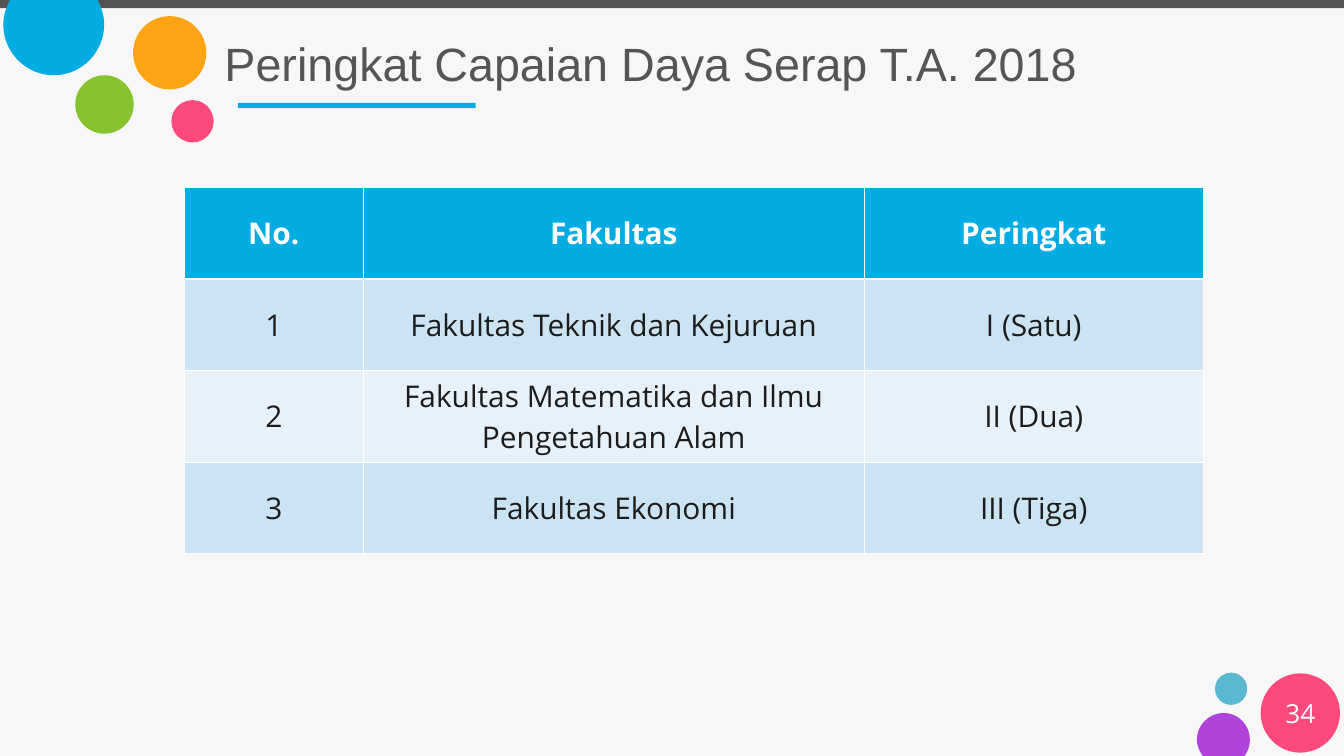
"""Build a slide that ranks faculties by budget absorption in 2018."""
import pptx
import pptx.dml.color
import pptx.enum.shapes
import pptx.enum.text
import pptx.oxml
import pptx.oxml.ns
import pptx.util

RGBColor = pptx.dml.color.RGBColor
Shape = pptx.enum.shapes.MSO_SHAPE
Align = pptx.enum.text.PP_ALIGN
Anchor = pptx.enum.text.MSO_ANCHOR

SCALE = 9144
SLIDE_WIDTH, SLIDE_HEIGHT = 2000, 1125

BACKGROUND = RGBColor(0xF7, 0xF7, 0xF7)
TOP_BAR = RGBColor(0x54, 0x54, 0x54)
TITLE_GREY = RGBColor(0x55, 0x55, 0x55)
BLUE = RGBColor(0x00, 0xAC, 0xE2)
PINK = RGBColor(0xFD, 0x49, 0x7C)
GREEN = RGBColor(0x87, 0xC3, 0x2F)
ORANGE = RGBColor(0xFF, 0xA5, 0x13)
TEAL = RGBColor(0x5B, 0xB8, 0xD1)
PURPLE = RGBColor(0xB1, 0x43, 0xDD)
WHITE = RGBColor(0xFF, 0xFF, 0xFF)
INK = RGBColor(0x1C, 0x1C, 0x1C)
BANDS = (RGBColor(0xCC, 0xE3, 0xF4), RGBColor(0xE7, 0xF1, 0xFA))

BUBBLES = [
    (112, 112, 87, GREEN),
    (198, 24, 109, ORANGE),
    (1808, 1001, 48, TEAL),
    (1876, 1002, 118, PINK),
]
TOP_BUBBLE = [
    [(15, 0)],
    [(145, 0)],
    [(151, 11), (155, 23), (155, 37)],
    [(155, 78), (121, 112), (80, 112)],
    [(39, 112), (5, 78), (5, 37)],
    [(5, 23), (9, 11), (15, 0)],
]
BOTTOM_BUBBLE = [
    [(1821, 1061)],
    [(1843, 1061), (1860, 1079), (1860, 1101)],
    [(1860, 1110), (1857, 1118), (1852, 1125)],
    [(1790, 1125)],
    [(1785, 1118), (1781, 1110), (1781, 1101)],
    [(1781, 1079), (1799, 1061), (1821, 1061)],
]

COLUMN_WIDTHS = (267, 745, 505)
ROW_HEIGHTS = (136, 136, 137, 136)
RANKING = [
    ("No.", "Fakultas", "Peringkat"),
    ("1", "Fakultas Teknik dan Kejuruan", "I (Satu)"),
    ("2", "Fakultas Matematika dan Ilmu Pengetahuan Alam", "II (Dua)"),
    ("3", "Fakultas Ekonomi", "III (Tiga)"),
]


def px(length):
    return pptx.util.Emu(length * SCALE)


def paint(shape, colour):
    shape.fill.solid()
    shape.fill.fore_color.rgb = colour
    shape.line.fill.background()
    shape.shadow.inherit = False


def add_plain(slide, kind, left, top, width, height, colour):
    shape = slide.shapes.add_shape(kind, px(left), px(top), px(width), px(height))
    paint(shape, colour)


def add_cut_bubble(slide, segments, colour):
    start, *rest = segments
    builder = slide.shapes.build_freeform(*start[0], scale=SCALE)
    builder.add_line_segments([point for segment in rest for point in segment], close=True)
    bubble = builder.convert_to_shape()
    lines = iter(bubble._element.findall(".//" + pptx.oxml.ns.qn("a:lnTo")))
    for segment in rest:
        steps = [next(lines) for _ in segment]
        if len(steps) == 3:
            curve = pptx.oxml.parse_xml(f'<a:cubicBezTo {pptx.oxml.ns.nsdecls("a")}/>')
            steps[0].addprevious(curve)
            for step in steps:
                curve.append(step[0])
                step.getparent().remove(step)
    paint(bubble, colour)


def set_font(paragraph, name, size, colour, bold=False):
    paragraph.font.name = name
    paragraph.font.size = pptx.util.Pt(size)
    paragraph.font.bold = bold
    paragraph.font.color.rgb = colour


def add_text(slide, text, left, top, width, height, font, size, colour, align):
    box = slide.shapes.add_textbox(px(left), px(top), px(width), px(height))
    frame = box.text_frame
    frame.word_wrap = True
    frame.vertical_anchor = Anchor.MIDDLE
    frame.margin_left = frame.margin_right = px(18)
    frame.margin_top = frame.margin_bottom = px(9)
    paragraph = frame.paragraphs[0]
    paragraph.text = text
    paragraph.alignment = align
    set_font(paragraph, font, size, colour)


def set_borders(cell, widths):
    properties = cell._tc.get_or_add_tcPr()
    for position, (side, points) in enumerate(widths.items()):
        border = pptx.oxml.parse_xml(
            f'<a:ln{side} {pptx.oxml.ns.nsdecls("a")} w="{pptx.util.Pt(points)}">'
            f'<a:solidFill><a:srgbClr val="{WHITE}"/></a:solidFill></a:ln{side}>'
        )
        properties.insert(position, border)


def add_ranking(slide, left, top):
    table = slide.shapes.add_table(
        len(RANKING), len(COLUMN_WIDTHS), px(left), px(top),
        px(sum(COLUMN_WIDTHS)), px(sum(ROW_HEIGHTS)),
    ).table
    for column, width in zip(table.columns, COLUMN_WIDTHS):
        column.width = px(width)
    for row_index, entries in enumerate(RANKING):
        header = row_index == 0
        table.rows[row_index].height = px(ROW_HEIGHTS[row_index])
        for column_index, entry in enumerate(entries):
            cell = table.cell(row_index, column_index)
            cell.fill.solid()
            cell.fill.fore_color.rgb = BLUE if header else BANDS[(row_index - 1) % 2]
            cell.vertical_anchor = Anchor.MIDDLE
            paragraph = cell.text_frame.paragraphs[0]
            paragraph.text = entry
            paragraph.alignment = Align.CENTER
            set_font(paragraph, "Open Sans", 32, WHITE if header else INK, header)
            top_width = 3 if row_index == 1 else 1
            set_borders(cell, {"L": 1, "R": 1, "T": top_width, "B": 3 if header else 1})


def main():
    deck = pptx.Presentation()
    deck.slide_width, deck.slide_height = px(SLIDE_WIDTH), px(SLIDE_HEIGHT)
    slide = deck.slides.add_slide(deck.slide_layouts[6])
    slide.background.fill.solid()
    slide.background.fill.fore_color.rgb = BACKGROUND

    add_plain(slide, Shape.RECTANGLE, 0, 0, SLIDE_WIDTH, 12, TOP_BAR)
    add_plain(slide, Shape.OVAL, 255, 149, 63, 63, PINK)
    add_cut_bubble(slide, TOP_BUBBLE, BLUE)
    for left, top, diameter, colour in BUBBLES:
        add_plain(slide, Shape.OVAL, left, top, diameter, diameter, colour)
    add_cut_bubble(slide, BOTTOM_BUBBLE, PURPLE)
    add_plain(slide, Shape.RECTANGLE, 354, 153, 354, 8, BLUE)

    add_text(slide, "Peringkat Capaian Daya Serap T.A. 2018", 316, 27, 1755, 132,
             "Arial", 50, TITLE_GREY, Align.LEFT)
    add_text(slide, "34", 1876, 1031, 118, 60, "Open Sans", 28, WHITE, Align.CENTER)
    add_ranking(slide, 274, 279)
    deck.save("out.pptx")


if __name__ == "__main__":
    main()
